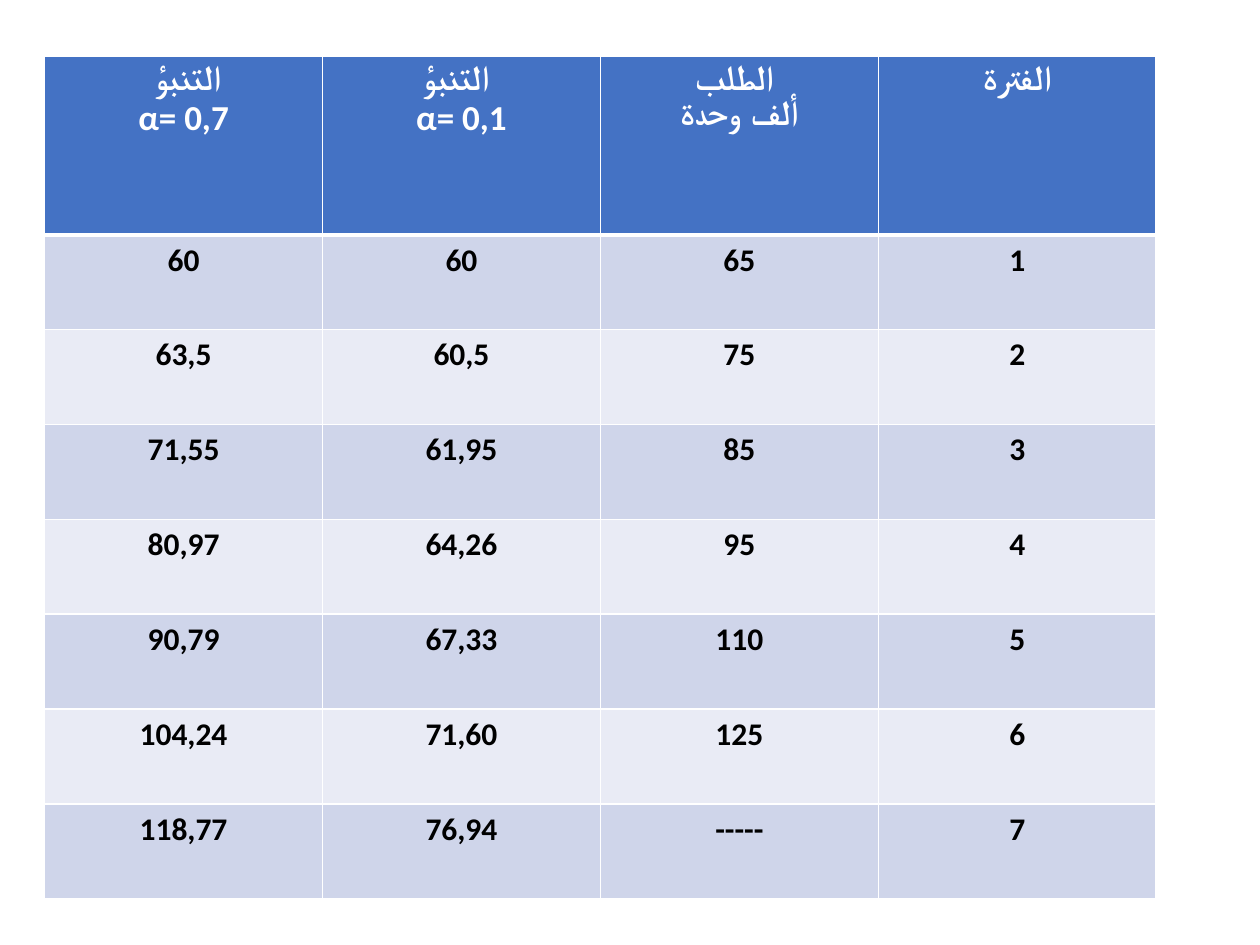
from lxml import etree
from pptx import Presentation
from pptx.dml.color import RGBColor
from pptx.enum.text import PP_ALIGN
from pptx.oxml.ns import qn
from pptx.util import Pt

CENTER = PP_ALIGN.CENTER
WHITE, BLACK, BLUE = "FFFFFF", "000000", "4472C4"
BANDS = ["CFD5EA", "E9EBF5"]
HEAD_H, ROW_H, COL_W = 102.2, 54.2, 158.8

ROWS = [
    [" التنبؤ\nα= 0,7", "التنبؤ \nα= 0,1", "الطلب \nألف وحدة", "الفترة"],
    ["60", "60", "65", "1"],
    ["63,5", "60,5", "75", "2"],
    ["71,55", "61,95", "85", "3"],
    ["80,97", "64,26", "95", "4"],
    ["90,79", "67,33", "110", "5"],
    ["104,24", "71,60", "125", "6"],
    ["118,77", "76,94", "-----", "7"],
]


def rgb(code):
    return RGBColor.from_string(code)


def write(cell, text, size=18, color=BLACK, fill=WHITE, top=1, bottom=1):
    """Fill a cell with centred bold text and white borders of given widths."""
    props = cell._tc.get_or_add_tcPr()
    for side, width in (("L", 1), ("R", 1), ("T", top), ("B", bottom)):
        line = etree.SubElement(props, qn("a:ln" + side), w=str(Pt(width)))
        solid = etree.SubElement(line, qn("a:solidFill"))
        etree.SubElement(solid, qn("a:srgbClr"), val=WHITE)
    cell.fill.solid()
    cell.fill.fore_color.rgb = rgb(fill)
    cell.text = text
    for para in cell.text_frame.paragraphs:
        para.alignment = CENTER
        for run in para.runs:
            font = run.font
            font.name, font.size, font.bold = "Calibri", Pt(size), True
            font.color.rgb = rgb(color)


deck = Presentation()
deck.slide_width, deck.slide_height = Pt(720), Pt(540)
slide = deck.slides.add_slide(deck.slide_layouts[6])

count, width = len(ROWS), len(ROWS[0])
table = slide.shapes.add_table(
    count, width, Pt(25.5), Pt(32), Pt(width * COL_W),
    Pt(HEAD_H + (count - 1) * ROW_H)).table

for col in table.columns:
    col.width = Pt(COL_W)

for r, texts in enumerate(ROWS):
    table.rows[r].height = Pt(ROW_H if r else HEAD_H)
    if r == 0:
        style = dict(size=20, color=WHITE, fill=BLUE, bottom=3)
    else:
        style = dict(fill=BANDS[(r - 1) % 2], top=3 if r == 1 else 1)
    for c, text in enumerate(texts):
        write(table.cell(r, c), text, **style)

deck.save("out.pptx")
